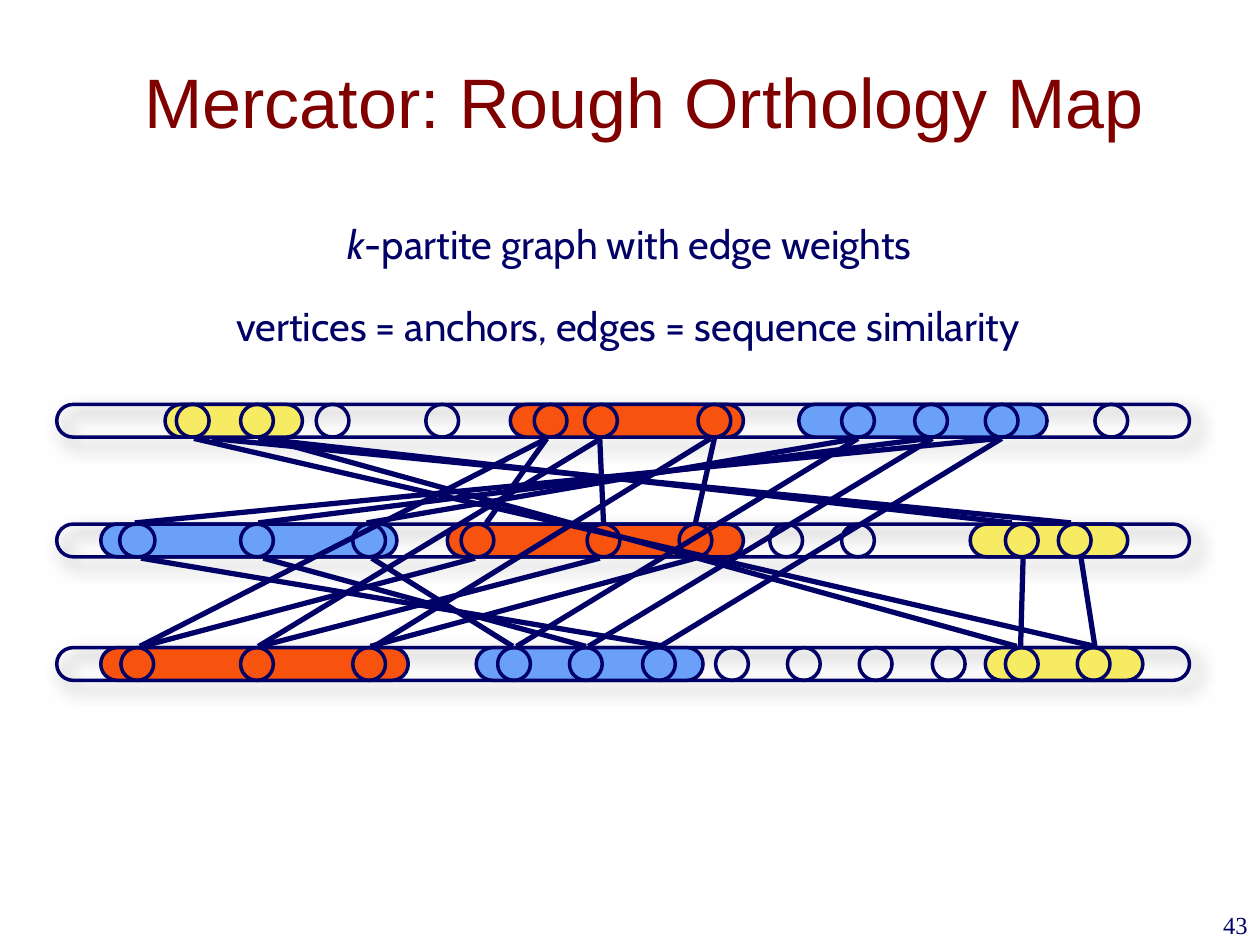
"""Build the rough orthology map slide: three genomes, their anchors and the similarity edges."""
from lxml import etree
from pptx import Presentation
from pptx.dml.color import RGBColor
from pptx.enum.shapes import MSO_CONNECTOR, MSO_SHAPE
from pptx.enum.text import MSO_ANCHOR, PP_ALIGN
from pptx.oxml import parse_xml
from pptx.oxml.ns import qn
from pptx.util import Inches, Pt

ROUNDED, ELLIPSE = MSO_SHAPE.ROUNDED_RECTANGLE, MSO_SHAPE.OVAL
STRAIGHT = MSO_CONNECTOR.STRAIGHT
MIDDLE, TOP = MSO_ANCHOR.MIDDLE, MSO_ANCHOR.TOP
CENTER, RIGHT = PP_ALIGN.CENTER, PP_ALIGN.RIGHT
COLORS = {"navy": "000066", "maroon": "800000", "yellow": "F7EB63",
          "blue": "6AA0F7", "orange": "F7520E", "shadow": "808080"}
SHADOW = (
    '<a:effectLst xmlns:a="http://schemas.openxmlformats.org/drawingml/2006/main">'
    f'<a:outerShdw blurRad="{Pt(10)}" dist="{Pt(6)}" dir="2700000" algn="tl" rotWithShape="0">'
    f'<a:srgbClr val="{COLORS["shadow"]}"><a:alpha val="75000"/></a:srgbClr>'
    '</a:outerShdw></a:effectLst>')

presentation = Presentation()
presentation.slide_width, presentation.slide_height = Inches(10), Inches(7.5)
slide = presentation.slides.add_slide(presentation.slide_layouts[5])
column = presentation.slide_width / 10
row = presentation.slide_height / 7.5
band = 0.26
genome_tops = {"first": 3.21, "second": 4.16, "third": 5.14}


def add_outline(kind, left, top, width, color=None):
    shape = slide.shapes.add_shape(kind, int(left * column), int(top * row),
                                   int(width * column), int(band * row))
    shape.shadow.inherit = False
    shape.line.color.rgb = RGBColor.from_string(COLORS["navy"])
    shape.line.width = Pt(2)
    if kind == ROUNDED:
        shape.adjustments[0] = 0.5
    if color:
        shape.fill.solid()
        shape.fill.fore_color.rgb = RGBColor.from_string(COLORS[color])
    else:
        shape.fill.background()
    return shape


def write_text(shape, place, text, font, size, color, alignment, anchor, insets):
    left, top, width, height = place
    shape.left, shape.top = int(left * column), int(top * row)
    shape.width, shape.height = int(width * column), int(height * row)
    frame = shape.text_frame
    frame.text = text
    frame.word_wrap = True
    frame.vertical_anchor = anchor
    frame.margin_left, frame.margin_top, frame.margin_right, frame.margin_bottom = map(Inches, insets)
    paragraph = frame.paragraphs[0]
    paragraph.alignment = alignment
    for run in paragraph.runs:
        run.font.name = font
        run.font.size = Pt(size)
        run.font.color.rgb = RGBColor.from_string(COLORS[color])
    return paragraph


write_text(slide.shapes.title, (0.83, 0.17, 8.5, 1.25), "Mercator: Rough Orthology Map",
           "Arial", 40, "maroon", CENTER, MIDDLE, (0.1, 0.05, 0.04, 0.05))

for top in genome_tops.values():
    genome = add_outline(ROUNDED, 0.45, top, 8.99)
    properties = genome._element.spPr
    properties.replace(properties.find(qn("a:effectLst")), parse_xml(SHADOW))

segments = {
    "yellow": [("first", 1.31, 1.09), ("second", 7.7, 1.25), ("third", 7.82, 1.25)],
    "blue": [("first", 6.34, 1.97), ("third", 3.78, 1.8), ("second", 0.8, 2.35)],
    "orange": [("third", 0.8, 2.44), ("second", 3.55, 2.35), ("first", 4.05, 1.85)],
}
for color, places in segments.items():
    for genome_name, left, width in places:
        add_outline(ROUNDED, left, genome_tops[genome_name], width, color)

anchors = {
    "first": [1.4, 1.91, 2.51, 3.38, 4.24, 4.64, 5.54, 6.68, 7.26, 7.82, 8.69],
    "second": [1.91, 2.8, 3.66, 4.66, 5.39, 6.11, 6.68, 7.98, 8.4],
    "third": [0.96, 1.91, 2.8, 3.95, 4.52, 5.1, 5.68, 6.25, 6.82, 7.4, 7.98, 8.55],
}
add_outline(ROUNDED, 0.95, genome_tops["second"], 0.28)
for genome_name, lefts in anchors.items():
    for left in lefts:
        add_outline(ELLIPSE, left, genome_tops[genome_name], band)

edges = {
    ("first", "second"): [(5.67, 5.52), (4.76, 4.79), (4.34, 3.86), (2.05, 8.03), (1.68, 8.5),
                          (7.37, 2.05), (7.93, 1.07), (6.8, 2.91)],
    ("second", "third"): [(1.12, 5.28), (4.76, 2.06), (2.95, 4.07), (2.09, 4.65), (3.77, 1.13),
                          (5.52, 2.94), (8.12, 8.1), (8.58, 8.69)],
    ("first", "third"): [(7.4, 4.67), (7.95, 5.24), (6.81, 4.1), (1.54, 8.69), (2.1, 8.07),
                         (5.64, 2.97), (4.77, 2.05), (4.34, 1.11)],
}
for (upper, lower), pairs in edges.items():
    start_y = int((genome_tops[upper] + band + 0.01) * row)
    end_y = int((genome_tops[lower] - 0.01) * row)
    for start_x, end_x in pairs:
        edge = slide.shapes.add_connector(STRAIGHT, int(start_x * column), start_y,
                                          int(end_x * column), end_y)
        edge.line.color.rgb = RGBColor.from_string(COLORS["navy"])
        edge.line.width = Pt(3)
        etree.SubElement(edge._element.spPr, qn("a:effectLst"))

captions = [
    ((2.59, 1.71, 4.82, 0.45), "k-partite graph with edge weights",
     "Cabin", 23, CENTER, MIDDLE, (0, 0, 0, 0)),
    ((1.56, 2.36, 6.86, 0.45), "vertices = anchors, edges = sequence similarity",
     "Cabin", 23, CENTER, MIDDLE, (0, 0, 0, 0)),
    ((7.92, 7.17, 2.08, 0.5), "43",
     "Times New Roman", 14, RIGHT, TOP, (0.1, 0.05, 0.1, 0.05)),
]
for place, text, font, size, alignment, anchor, insets in captions:
    paragraph = write_text(slide.shapes.add_textbox(0, 0, 0, 0), place, text, font, size,
                           "navy", alignment, anchor, insets)
    if text.startswith("k-"):
        rest = paragraph.add_run()
        rest.text = text[1:]
        first = paragraph.runs[0]
        first.text = text[0]
        rest.font.name, rest.font.size = font, Pt(size)
        rest.font.color.rgb = RGBColor.from_string(COLORS["navy"])
        first.font.italic = True

presentation.save("out.pptx")
